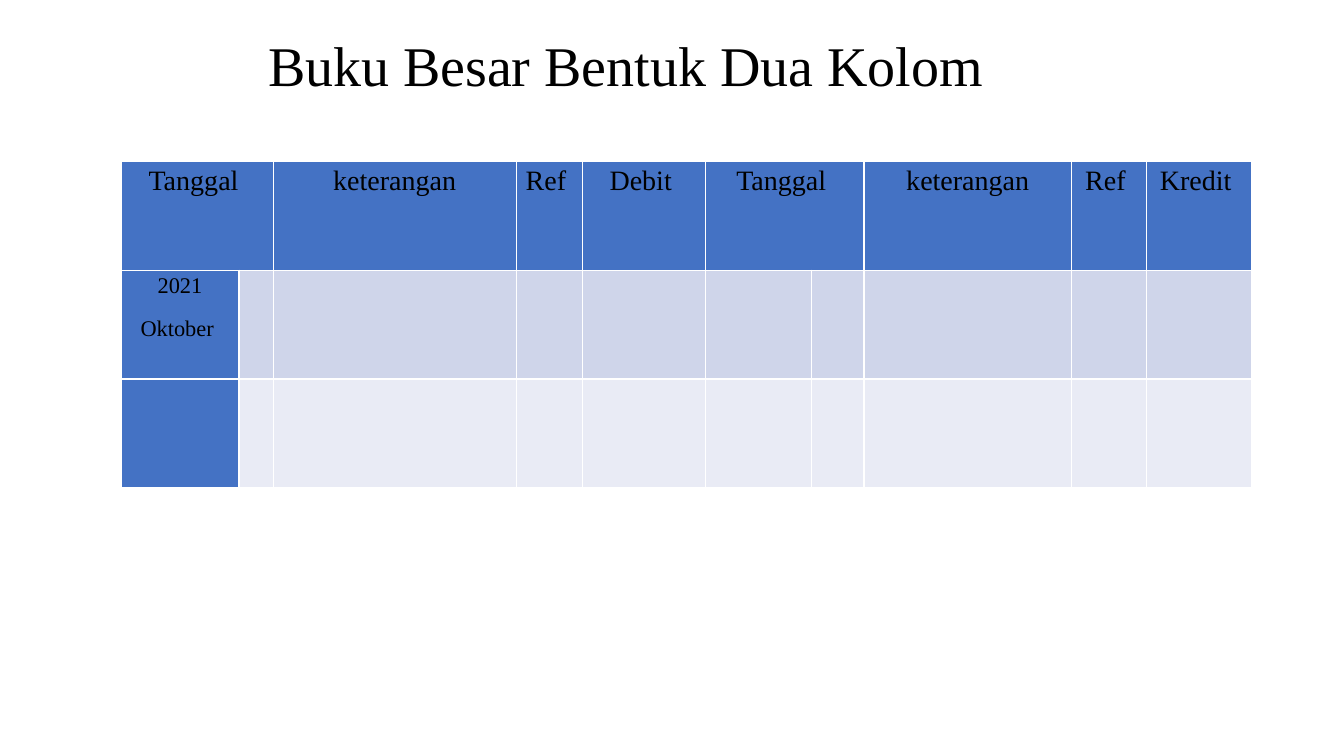
import pptx
import pptx.dml.color
import pptx.enum.text
import pptx.oxml
import pptx.oxml.ns
import pptx.util
from dataclasses import dataclass

PX = 9144  # 100 px to the inch


@dataclass(frozen=True)
class Theme:
    font: str = "Times New Roman"
    ink: str = "000000"
    header: str = "4472C4"
    bands: tuple = ("CFD5EA", "E9EBF5")
    border: str = "FFFFFF"
    title_size: int = 40
    header_size: int = 20
    date_size: int = 16


theme = Theme()
rgb = pptx.dml.color.RGBColor.from_string


def add_text(paragraph, text, size):
    run = paragraph.add_run()
    run.text = text
    run.font.name = theme.font
    run.font.size = pptx.util.Pt(size)
    run.font.bold = False
    run.font.color.rgb = rgb(theme.ink)


def style_cell(cell, fill, lines, size):
    """Give a ledger cell its borders, fill and centred lines of text."""
    properties = cell._tc.get_or_add_tcPr()
    for side in ("lnL", "lnR", "lnT", "lnB"):
        properties.append(pptx.oxml.parse_xml(
            f'<a:{side} {pptx.oxml.ns.nsdecls("a")} w="{pptx.util.Pt(1)}">'
            f'<a:solidFill><a:srgbClr val="{theme.border}"/></a:solidFill></a:{side}>'))
    cell.fill.solid()
    cell.fill.fore_color.rgb = rgb(fill)
    cell.margin_left = cell.margin_right = 7 * PX
    cell.margin_top = cell.margin_bottom = 0
    for index, line in enumerate(lines):
        frame = cell.text_frame
        paragraph = frame.add_paragraph() if index else frame.paragraphs[0]
        paragraph.alignment = pptx.enum.text.PP_ALIGN.CENTER
        paragraph.line_spacing = 1.15
        paragraph.space_after = pptx.util.Pt(10)
        add_text(paragraph, line, size)


deck = pptx.Presentation()
deck.slide_width, deck.slide_height = 1333 * PX, 750 * PX
slide = deck.slides.add_slide(deck.slide_layouts[6])

title = slide.shapes.add_textbox(256 * PX, 33 * PX, 899 * PX, 69 * PX).text_frame
title.word_wrap = True
title.vertical_anchor = pptx.enum.text.MSO_ANCHOR.MIDDLE
title.paragraphs[0].line_spacing = 0.9
add_text(title.paragraphs[0], "Buku Besar Bentuk Dua Kolom", theme.title_size)

column_widths = [117, 34, 241, 66, 122, 105, 52, 206, 74, 105]
row_height = 108
headings = {0: "Tanggal ", 2: "keterangan", 3: "Ref ", 4: "Debit ",
            5: "Tanggal ", 7: "keterangan", 8: "Ref ", 9: "Kredit "}
date_lines = ["2021", "Oktober "]

ledger = slide.shapes.add_table(
    3, len(column_widths), 120 * PX, 160 * PX,
    sum(column_widths) * PX, 3 * row_height * PX).table
ledger.first_col = True
for column, width in zip(ledger.columns, column_widths):
    column.width = width * PX
for row in ledger.rows:
    row.height = row_height * PX

for date_column in (0, 5):
    ledger.cell(0, date_column).merge(ledger.cell(0, date_column + 1))

for c in range(len(column_widths)):
    heading = [headings[c]] if c in headings else []
    style_cell(ledger.cell(0, c), theme.header, heading, theme.header_size)
    for r, band in enumerate(theme.bands, start=1):
        fill = theme.header if c == 0 else band
        lines = date_lines if (r, c) == (1, 0) else []
        style_cell(ledger.cell(r, c), fill, lines, theme.date_size)

deck.save("out.pptx")
